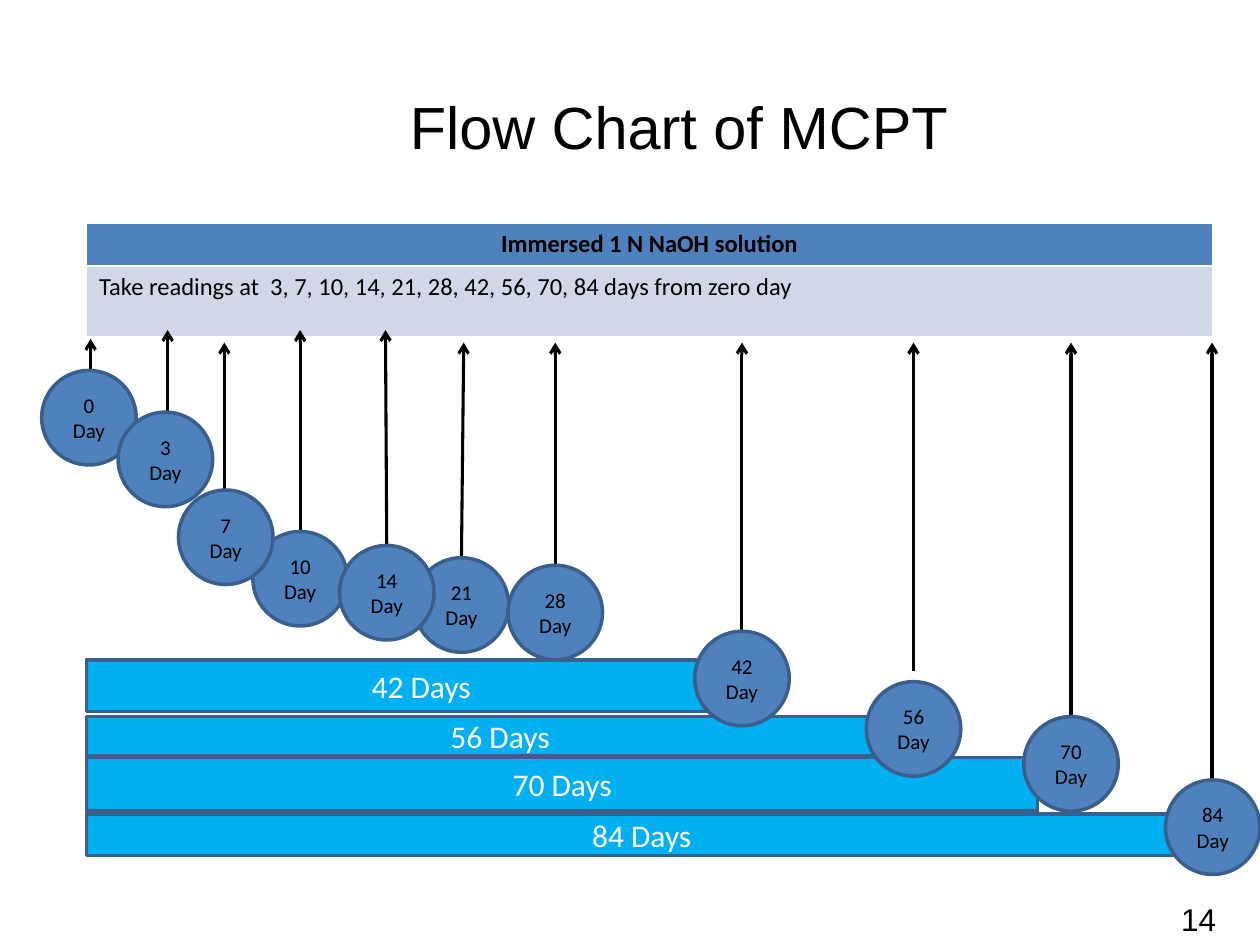
from dataclasses import dataclass
from lxml import etree
from pptx import Presentation
from pptx.dml.color import RGBColor
from pptx.enum.shapes import MSO_CONNECTOR, MSO_SHAPE
from pptx.enum.text import MSO_ANCHOR, PP_ALIGN
from pptx.oxml.ns import qn
from pptx.util import Pt

RECTANGLE = MSO_SHAPE.RECTANGLE
OVAL = MSO_SHAPE.OVAL
STRAIGHT = MSO_CONNECTOR.STRAIGHT
LEFT, CENTER, RIGHT = PP_ALIGN.LEFT, PP_ALIGN.CENTER, PP_ALIGN.RIGHT
MIDDLE = MSO_ANCHOR.MIDDLE


@dataclass(frozen=True)
class Theme:
    black: str = "000000"
    white: str = "FFFFFF"
    blue: str = "4F81BD"
    outline: str = "3A5F8C"
    bar: str = "00B0F0"
    pale: str = "D0D8E8"
    heading_font: str = "Arial"
    body_font: str = "Calibri"
    title_size: float = 34
    number_size: float = 18
    bar_size: float = 18
    table_size: float = 14
    circle_size: float = 12
    outline_width: float = 2
    arrow_width: float = 1.75


class FlowPage:
    def __init__(self, page, theme):
        self.page = page
        self.theme = theme

    def set_text(self, frame, text, size, color, font, align, bold=False):
        frame.word_wrap = True
        frame.text = text
        para = frame.paragraphs[0]
        para.alignment = align
        span = para.runs[0]
        span.font.name = font
        span.font.size = Pt(size)
        span.font.bold = bold
        span.font.color.rgb = RGBColor.from_string(color)

    def label(self, text, left, top, width, height, size, align):
        box = self.page.shapes.add_textbox(Pt(left), Pt(top), Pt(width), Pt(height))
        self.set_text(box.text_frame, text, size, self.theme.black,
                      self.theme.heading_font, align)

    def block(self, kind, text, left, top, width, height, fill, size, color):
        shape = self.page.shapes.add_shape(
            kind, Pt(left), Pt(top), Pt(width), Pt(height))
        shape.shadow.inherit = False
        shape.fill.solid()
        shape.fill.fore_color.rgb = RGBColor.from_string(fill)
        shape.line.color.rgb = RGBColor.from_string(self.theme.outline)
        shape.line.width = Pt(self.theme.outline_width)
        shape.text_frame.vertical_anchor = MIDDLE
        self.set_text(shape.text_frame, text, size, color,
                      self.theme.body_font, CENTER)

    def bar(self, days, left, top, width, height):
        self.block(RECTANGLE, f"{days} Days", left, top, width, height,
                   self.theme.bar, self.theme.bar_size, self.theme.white)

    def circle(self, day, left, top, diameter):
        self.block(OVAL, f"{day} Day", left, top, diameter, diameter,
                   self.theme.blue, self.theme.circle_size, self.theme.black)

    def arrow(self, start_x, start_y, end_x, end_y):
        connector = self.page.shapes.add_connector(
            STRAIGHT, Pt(start_x), Pt(start_y), Pt(end_x), Pt(end_y))
        connector.line.color.rgb = RGBColor.from_string(self.theme.black)
        connector.line.width = Pt(self.theme.arrow_width)
        properties = connector._element.spPr
        outline = properties.find(qn("a:ln"))
        etree.SubElement(outline, qn("a:tailEnd"), type="arrow")
        etree.SubElement(properties, qn("a:effectLst"))

    def table(self, rows, left, top, width):
        total = sum(row[1] for row in rows)
        frame = self.page.shapes.add_table(
            len(rows), 1, Pt(left), Pt(top), Pt(width), Pt(total))
        table = frame.table
        for index, (text, height, fill, align, bold) in enumerate(rows):
            table.rows[index].height = Pt(height)
            cell = table.cell(index, 0)
            cell.fill.solid()
            cell.fill.fore_color.rgb = RGBColor.from_string(fill)
            self.set_text(cell.text_frame, text, self.theme.table_size,
                          self.theme.black, self.theme.body_font, align, bold)


BAR_LEFT = 49.5
BARS = [
    (42, 377, 382.5, 29.5),
    (56, 409.5, 472.5, 22.5),
    (84, 465, 634.5, 24),
    (70, 433, 543.5, 30.5),
]

DIAMETER = 54
HIGH_TIP, LOW_TIP = 188.6, 195.8
READINGS = [
    (84, 666, 445.7, 692.6, LOW_TIP),
    (0, 23.8, 211.7, 51.8, 193.7),
    (56, 495, 389.5, 522, LOW_TIP),
    (21, 236.7, 318.7, 265, LOW_TIP),
    (42, 397, 360.7, 424, LOW_TIP),
    (70, 585, 409.5, 612, LOW_TIP),
    (10, 144.5, 303.7, 171.5, HIGH_TIP),
    (28, 290.3, 323, 317.3, LOW_TIP),
    (14, 194, 311.7, 220.3, HIGH_TIP),
    (3, 67.5, 235.5, 95.8, HIGH_TIP),
    (7, 102, 280, 128.2, LOW_TIP),
]
SLANTED = {14, 21}
ARROW_GAPS = {56: 6}


def main():
    theme = Theme()
    deck = Presentation()
    deck.slide_width, deck.slide_height = Pt(720), Pt(540)
    flow = FlowPage(deck.slides.add_slide(deck.slide_layouts[6]), theme)

    for days, top, width, height in BARS:
        flow.bar(days, BAR_LEFT, top, width, height)

    flow.table([
        ("Immersed 1 N NaOH solution", 24.5, theme.blue, CENTER, True),
        ("Take readings at  3, 7, 10, 14, 21, 28, 42, 56, 70, 84 days from zero day",
         40.5, theme.pale, LEFT, False),
    ], BAR_LEFT, 127.5, 643.5)

    for day, left, top, tip_x, tip_y in READINGS:
        start_x = left + DIAMETER / 2 if day in SLANTED else tip_x
        flow.arrow(start_x, top - ARROW_GAPS.get(day, 0), tip_x, tip_y)
        flow.circle(day, left, top, DIAMETER)

    flow.label("Flow Chart of MCPT", 121.5, 48, 533, 48, theme.title_size, CENTER)
    flow.label("14", 558, 511, 144, 29, theme.number_size, RIGHT)
    deck.save("out.pptx")


if __name__ == "__main__":
    main()
